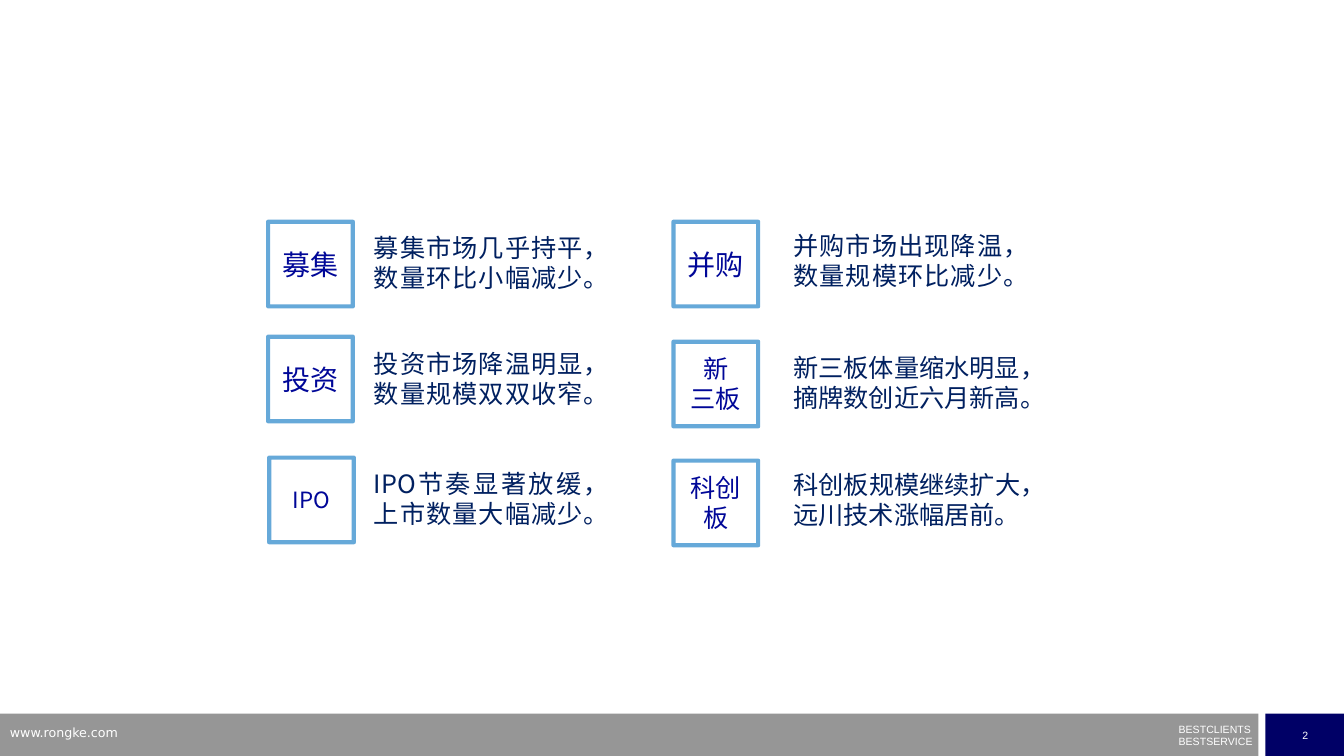
from lxml.etree import SubElement
from pptx import Presentation
from pptx.dml.color import RGBColor
from pptx.enum.shapes import MSO_SHAPE
from pptx.enum.text import MSO_ANCHOR, PP_ALIGN
from pptx.oxml.ns import qn
from pptx.util import Inches, Pt

WHITE = RGBColor(0xFF, 0xFF, 0xFF)
GREY = RGBColor(0x96, 0x96, 0x96)
DEEP_BLUE = RGBColor(0x00, 0x00, 0x66)
FRAME_BLUE = RGBColor(0x00, 0x70, 0xC0)
LABEL_BLUE = RGBColor(0x00, 0x07, 0x98)
TEXT_NAVY = RGBColor(0x00, 0x20, 0x60)

LABEL_FONT = "Noto Sans CJK JP"
BODY_FONT = "Noto Sans CJK SC"
TILE_SIZE = 0.84
TEXT_HEIGHT = 0.71
LINE_FACTOR = 1.19


class SlideBuilder:
    """Holds the slide and draws its kinds of element."""

    def __init__(self, slide):
        self.slide = slide

    def fill_text(self, shape, lines, size, font, color, align, spacing=None):
        frame = shape.text_frame
        frame.word_wrap = True
        for index, line in enumerate(lines):
            paragraph = frame.paragraphs[0] if index == 0 else frame.add_paragraph()
            paragraph.alignment = align
            if spacing:
                paragraph.line_spacing = Pt(round(size * spacing, 1))
            run = paragraph.add_run()
            run.text = line
            run.font.size = Pt(size)
            run.font.name = font
            run.font.color.rgb = color
            east_asian = SubElement(run.font._element, qn("a:ea"))
            east_asian.set("typeface", font)
        return frame

    def rectangle(self, left, top, width, height, fill=None):
        shape = self.slide.shapes.add_shape(
            MSO_SHAPE.RECTANGLE, Inches(left), Inches(top), Inches(width), Inches(height))
        shape.shadow.inherit = False
        if fill is None:
            shape.fill.background()
        else:
            shape.fill.solid()
            shape.fill.fore_color.rgb = fill
        shape.line.fill.background()
        shape.text_frame.vertical_anchor = MSO_ANCHOR.MIDDLE
        return shape

    def text(self, left, top, width, height, lines, size, font, color,
             align=PP_ALIGN.LEFT, spacing=None):
        box = self.slide.shapes.add_textbox(
            Inches(left), Inches(top), Inches(width), Inches(height))
        return self.fill_text(box, lines, size, font, color, align, spacing)

    def tile(self, left, top, lines, size):
        shape = self.rectangle(left, top, TILE_SIZE, TILE_SIZE)
        shape.line.color.rgb = FRAME_BLUE
        shape.line.width = Pt(3)
        color = shape.line._ln.find(".//" + qn("a:srgbClr"))
        SubElement(color, qn("a:alpha")).set("val", "60000")
        self.fill_text(shape, lines, size, LABEL_FONT, LABEL_BLUE, PP_ALIGN.CENTER, LINE_FACTOR)

    def statement(self, left, top, width, lines):
        self.text(left, top, width, TEXT_HEIGHT, lines, 18, BODY_FONT, TEXT_NAVY,
                  PP_ALIGN.JUSTIFY, LINE_FACTOR)


# Each topic: tile left and top, label, label size, text left, top and width, text
TOPICS = [
    (2.66, 2.2, ["募集"], 20, 3.61, 2.26, 2.28, ["募集市场几乎持平，", "数量环比小幅减少。"]),
    (2.66, 3.34, ["投资"], 20, 3.61, 3.41, 2.28, ["投资市场降温明显，", "数量规模双双收窄。"]),
    (2.67, 4.54, ["IPO"], 16, 3.61, 4.6, 2.28, ["IPO节奏显著放缓，", "上市数量大幅减少。"]),
    (6.68, 2.2, ["并购"], 20, 7.77, 2.24, 2.28, ["并购市场出现降温，", "数量规模环比减少。"]),
    (6.68, 3.39, ["新", "三板"], 18, 7.77, 3.45, 2.7,
     ["新三板体量缩水明显，", "摘牌数创近六月新高。"]),
    (6.68, 4.57, ["科创板"], 18, 7.77, 4.61, 2.45,
     ["科创板规模继续扩大，", "远川技术涨幅居前。"]),
]


def main():
    presentation = Presentation()
    presentation.slide_width = Inches(13.33)
    presentation.slide_height = Inches(7.5)
    slide = presentation.slides.add_slide(presentation.slide_layouts[6])
    builder = SlideBuilder(slide)

    # Footer band
    builder.rectangle(0, 7.08, 12.48, 0.42, GREY)
    page = builder.rectangle(12.55, 7.08, 0.79, 0.42, DEEP_BLUE)
    builder.fill_text(page, ["2"], 7.5, "Arial", WHITE, PP_ALIGN.CENTER)
    motto = builder.text(11.69, 7.17, 0.76, 0.25, ["BESTCLIENTS", "BESTSERVICE"],
                         7.5, "Arial", WHITE)
    motto.margin_left = motto.margin_right = motto.margin_top = motto.margin_bottom = 0
    builder.text(0, 7.14, 3.2, 0.26, ["www.rongke.com"], 9, "DejaVu Sans", WHITE)

    # Topics
    for tile_left, tile_top, label, size, left, top, width, lines in TOPICS:
        builder.tile(tile_left, tile_top, label, size)
        builder.statement(left, top, width, lines)

    presentation.save("out.pptx")


if __name__ == "__main__":
    main()
